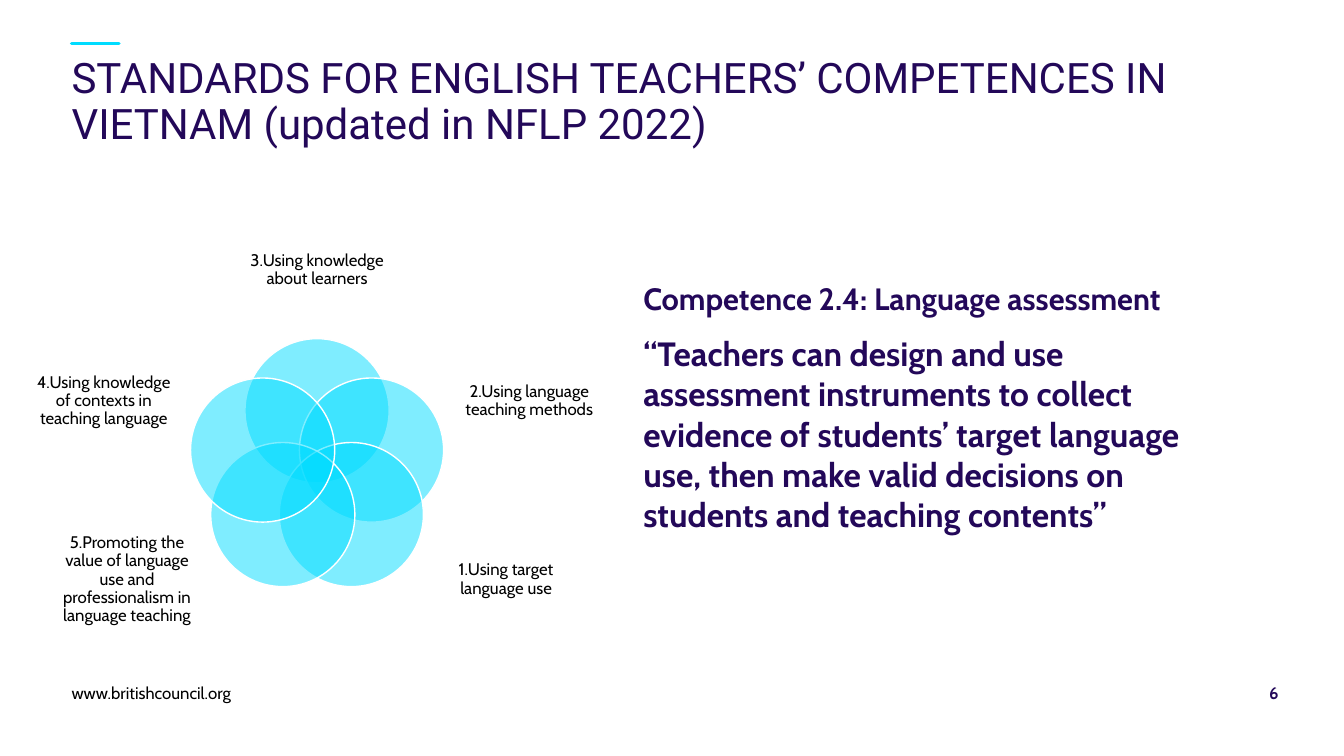
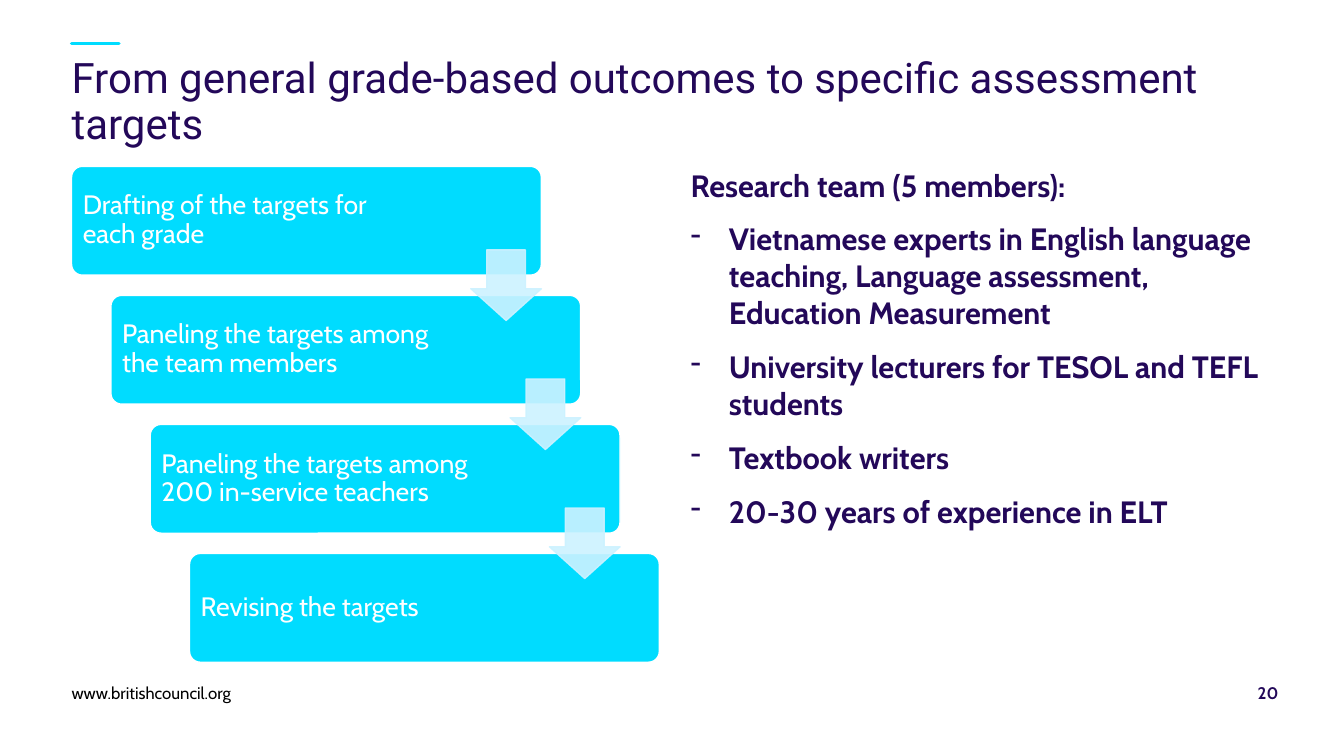
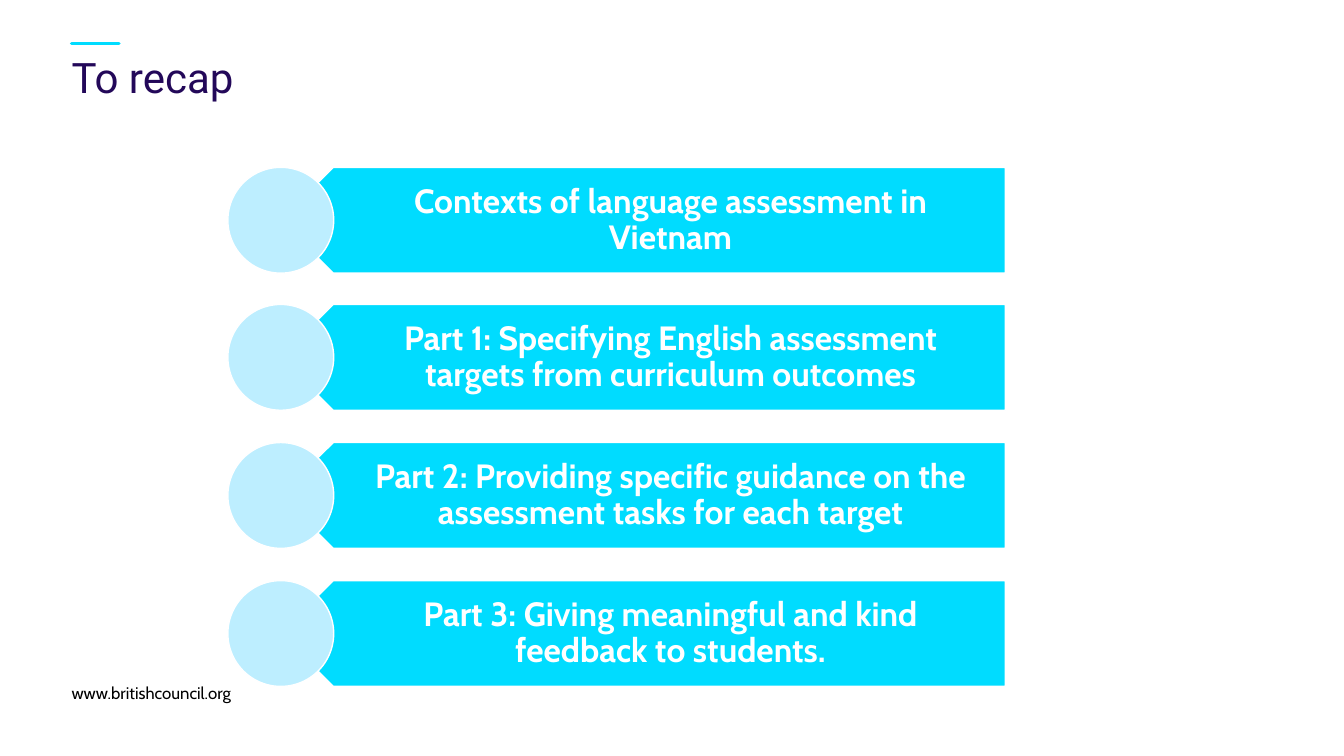
from dataclasses import dataclass
from math import cos, radians, sin
from typing import NamedTuple

from lxml import etree
from pptx import Presentation
from pptx.dml.color import RGBColor
from pptx.enum.shapes import MSO_CONNECTOR, MSO_SHAPE
from pptx.enum.text import MSO_ANCHOR, MSO_AUTO_SIZE, PP_ALIGN
from pptx.oxml.ns import qn
from pptx.shapes.autoshape import Shape
from pptx.slide import Slide
from pptx.text.text import TextFrame
from pptx.util import Pt

PX = 9144  # EMU in one px, at 100 px to the inch
LEFT, CENTER, RIGHT = PP_ALIGN.LEFT, PP_ALIGN.CENTER, PP_ALIGN.RIGHT
TOP, MIDDLE, BOTTOM = MSO_ANCHOR.TOP, MSO_ANCHOR.MIDDLE, MSO_ANCHOR.BOTTOM
OVAL, ROUND = MSO_SHAPE.OVAL, MSO_SHAPE.ROUNDED_RECTANGLE
ARROW, PLATE = MSO_SHAPE.DOWN_ARROW, MSO_SHAPE.PENTAGON
TITLE_ONLY = 5


@dataclass(frozen=True)
class Theme:
    ink: str = "230859"
    black: str = "000000"
    white: str = "FFFFFF"
    cyan: str = "00DCFF"
    pale: str = "CCF2FF"
    disc: str = "BDEEFF"
    head_font: str = "Roboto"
    body_font: str = "Cabin"
    head: int = 30
    quote: int = 24
    body: int = 22
    step: int = 19
    small: int = 12


THEME = Theme()


class Box(NamedTuple):
    left: int
    top: int
    width: int
    height: int

    def emu(self) -> list[int]:
        return [side * PX for side in self]


class Pads(NamedTuple):
    left: int = 0
    top: int = 0
    right: int = 0
    bottom: int = 0


@dataclass(frozen=True)
class Style:
    size: int
    color: str = THEME.ink
    bold: bool = False
    align: PP_ALIGN = LEFT
    line: float | Pt | None = None
    gap: int = 0
    bullet: str = ""
    font: str = THEME.body_font


class Para(NamedTuple):
    text: str
    style: Style


class Label(NamedTuple):
    text: str
    box: Box


HEAD = Style(THEME.head, line=Pt(33), font=THEME.head_font)
LEAD = Style(THEME.body, bold=True, gap=6)
QUOTE = Style(THEME.quote, bold=True, gap=6)
ITEM = Style(THEME.body, bold=True, gap=6, bullet="-")
SITE = Style(THEME.small, THEME.black)
PAGE = Style(THEME.small, bold=True, align=RIGHT)
NOTE = Style(THEME.small, THEME.black, align=CENTER, line=0.9)
STEP = Style(THEME.step, THEME.white, line=0.9)
PART = Style(THEME.quote, THEME.white, bold=True, align=CENTER, line=0.9)


def write(frame: TextFrame, paras: list[Para], anchor: MSO_ANCHOR = TOP,
          pads: Pads = Pads()) -> None:
    frame.word_wrap = True
    frame.auto_size = MSO_AUTO_SIZE.NONE
    frame.vertical_anchor = anchor
    frame.margin_left, frame.margin_top, frame.margin_right, frame.margin_bottom = (
        pad * PX for pad in pads)
    for i, (text, style) in enumerate(paras):
        para = frame.add_paragraph() if i else frame.paragraphs[0]
        para.text = text
        if style.bullet:
            props = para._p.get_or_add_pPr()
            props.set("marL", str(38 * PX))
            props.set("indent", str(-38 * PX))
            etree.SubElement(props, qn("a:buChar"), char=style.bullet)
        para.alignment = style.align
        para.space_before = Pt(style.gap if i else 0)
        para.space_after = Pt(style.gap)
        if style.line:
            para.line_spacing = style.line
        para.font.name = style.font
        para.font.size = Pt(style.size)
        para.font.bold = style.bold
        para.font.color.rgb = RGBColor.from_string(style.color)


def add_text(slide: Slide, box: Box, paras: list[Para], anchor: MSO_ANCHOR = TOP,
             pads: Pads = Pads()) -> None:
    write(slide.shapes.add_textbox(*box.emu()).text_frame, paras, anchor, pads)


def add_block(slide: Slide, kind: MSO_SHAPE, box: Box, fill: str,
              edge: str = THEME.white) -> Shape:
    shape = slide.shapes.add_shape(kind, *box.emu())
    shape.shadow.inherit = False
    shape.fill.solid()
    shape.fill.fore_color.rgb = RGBColor.from_string(fill)
    shape.line.color.rgb = RGBColor.from_string(edge)
    shape.line.width = Pt(1)
    return shape


def fade(shape: Shape, percent: int, edge: bool = False) -> None:
    """Make the fill, and the edge if asked, partly see-through."""
    colors = list(shape._element.spPr.iter(qn("a:srgbClr")))
    for color in colors if edge else colors[:1]:
        etree.SubElement(color, qn("a:alpha"), val=str(percent * 1000))


def add_dash(slide: Slide) -> None:
    dash = slide.shapes.add_connector(
        MSO_CONNECTOR.STRAIGHT, 71 * PX, 43 * PX, 118 * PX, 43 * PX)
    dash.line.color.rgb = RGBColor.from_string(THEME.cyan)
    dash.line.width = Pt(2.4)
    props = dash._element.spPr
    props.find(qn("a:ln")).set("cap", "rnd")
    etree.SubElement(props, qn("a:effectLst"))


def start(deck: Presentation, title: str, page: str = "") -> Slide:
    """Add a slide with its title, dash and footer."""
    slide = deck.slides.add_slide(deck.slide_layouts[TITLE_ONLY])
    add_dash(slide)
    head = slide.shapes.title
    head.left, head.top, head.width, head.height = Box(71, 55, 1197, 87).emu()
    write(head.text_frame, [Para(title, HEAD)])
    add_text(slide, Box(71, 677, 1142, 20),
             [Para("www.britishcouncil.org", SITE)], BOTTOM)
    if page:
        add_text(slide, Box(1213, 677, 55, 20), [Para(page, PAGE)], BOTTOM)
    return slide


def add_petals(slide: Slide, labels: list[Label]) -> None:
    """Draw overlapping discs clockwise around a ring, from the top."""
    mid_x, mid_y, ring, size = 314.5, 464.5, 57, 143
    for i, label in enumerate(labels):
        turn = radians(360 * i / len(labels))
        left = round(mid_x + ring * sin(turn) - size / 2)
        top = round(mid_y - ring * cos(turn) - size / 2)
        fade(add_block(slide, OVAL, Box(left, top, size, size), THEME.cyan), 50)
        add_text(slide, label.box, [Para(label.text, NOTE)], MIDDLE)


def add_stairs(slide: Slide, steps: list[str]) -> None:
    first, shift, drop, tip = Box(71, 165, 466, 108), 39, 128, 70
    boxes = [first._replace(left=first.left + shift * i, top=first.top + drop * i)
             for i in range(len(steps))]
    for box, text in zip(boxes, steps):
        block = add_block(slide, ROUND, box, THEME.cyan)
        block.adjustments[0] = 0.1
        write(block.text_frame, [Para(text, STEP)], MIDDLE, Pads(8, 8, 128, 8))
    for box in boxes[:-1]:
        spot = Box(box.left + box.width - tip, box.top + 83, tip, tip)
        arrow = add_block(slide, ARROW, spot, THEME.pale, THEME.pale)
        arrow.adjustments[0], arrow.adjustments[1] = 0.55, 0.45
        fade(arrow, 90, edge=True)


def add_parts(slide: Slide, parts: list[str]) -> None:
    first, last, size = 166, 576, 105
    for i, text in enumerate(parts):
        top = first + (last - first) * i // (len(parts) - 1)
        plate = add_block(slide, PLATE, Box(278, top, 719, size), THEME.cyan)
        plate.rotation = 180
        add_text(slide, Box(305, top, 693, size), [Para(text, PART)], MIDDLE,
                 Pads(46, 10, 19, 10))
        add_block(slide, OVAL, Box(226, top, size, size), THEME.disc)


def main() -> None:
    deck = Presentation()
    deck.slide_width, deck.slide_height = 1333 * PX, 750 * PX

    slide = start(deck, "STANDARDS FOR ENGLISH TEACHERS’ COMPETENCES IN VIETNAM "
                        "(updated in NFLP 2022)", "6")
    add_text(slide, Box(638, 277, 575, 381), [
        Para("Competence 2.4: Language assessment", LEAD),
        Para("“Teachers can design and use assessment instruments to collect "
             "evidence of students’ target language use, then make valid "
             "decisions on students and teaching contents”", QUOTE),
    ])
    add_petals(slide, [
        Label("3.Using knowledge about learners", Box(232, 220, 165, 96)),
        Label("2.Using language teaching methods", Box(451, 346, 148, 104)),
        Label("1.Using target language use", Box(428, 523, 148, 104)),
        Label("5.Promoting the value of language use and professionalism in "
              "language teaching", Box(52, 523, 148, 104)),
        Label("4.Using knowledge of contexts in teaching language",
              Box(29, 346, 148, 104)),
    ])

    slide = start(deck, "From general grade-based outcomes to specific "
                        "assessment targets", "20")
    add_stairs(slide, [
        "Drafting of the targets for each grade",
        "Paneling the targets among the team members",
        "Paneling the targets among 200 in-service teachers",
        "Revising the targets",
    ])
    add_text(slide, Box(685, 165, 583, 492), [
        Para("Research team (5 members):", LEAD),
        Para("Vietnamese experts in English language teaching, Language "
             "assessment, Education Measurement", ITEM),
        Para("University lecturers for TESOL and TEFL students", ITEM),
        Para("Textbook writers", ITEM),
        Para("20-30 years of experience in ELT", ITEM),
    ])

    slide = start(deck, "To recap")
    add_parts(slide, [
        "Contexts of language assessment in Vietnam",
        "Part 1: Specifying English assessment targets from curriculum outcomes",
        "Part 2: Providing specific guidance on the assessment tasks for each target",
        "Part 3: Giving meaningful and kind feedback to students.",
    ])

    deck.save("out.pptx")


if __name__ == "__main__":
    main()
